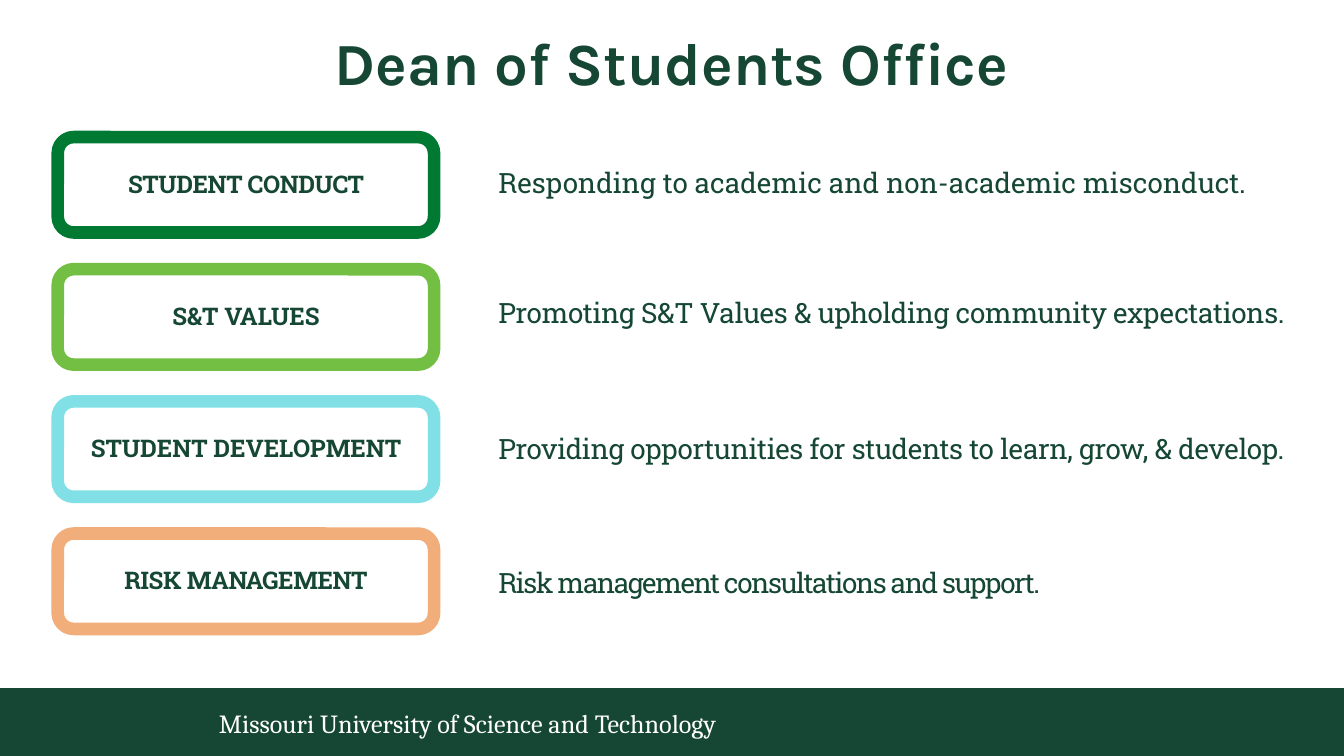
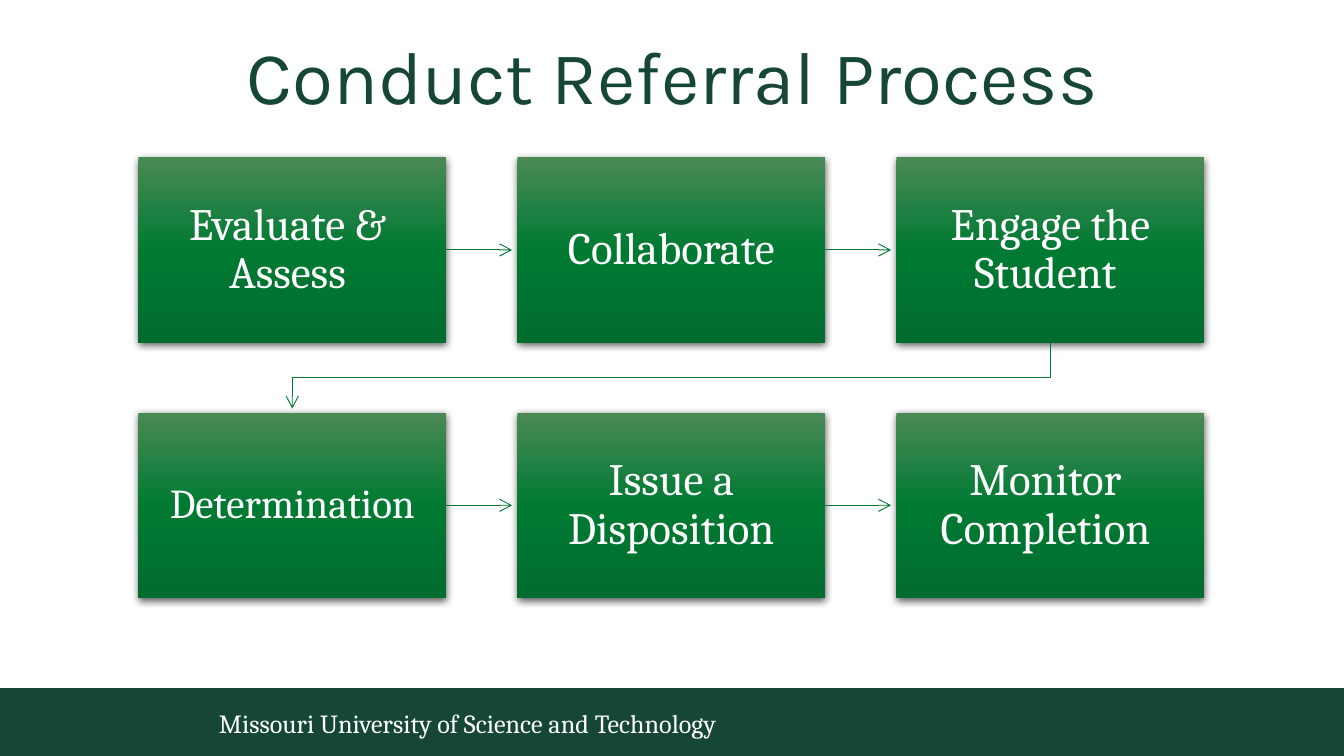
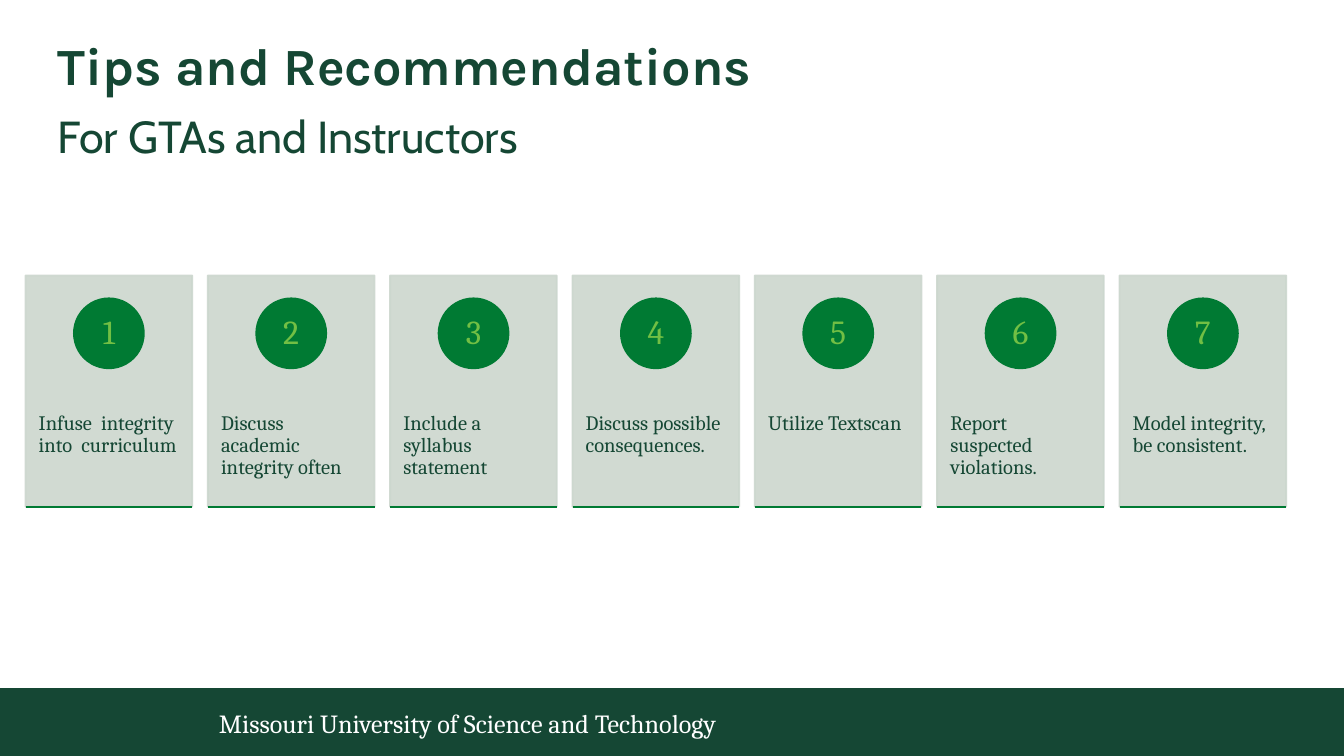
"""Build three slides about the Dean of Students Office."""
from dataclasses import dataclass

from pptx import Presentation
from pptx.dml.color import RGBColor
from pptx.enum.shapes import MSO_CONNECTOR, MSO_SHAPE
from pptx.enum.text import MSO_ANCHOR, MSO_AUTO_SIZE, PP_ALIGN
from pptx.oxml import parse_xml
from pptx.oxml.ns import nsdecls, qn
from pptx.util import Inches, Pt


@dataclass(frozen=True)
class Theme:
    """Hold the colours, fonts and type sizes."""

    dark: str = "154734"
    green: str = "007A33"
    lime: str = "72BF44"
    aqua: str = "81E0E5"
    peach: str = "F1AD7A"
    card: str = "CCD7CE"
    white: str = "FFFFFF"
    gradient: tuple = ((0, "4B8957"), (50, "007A33"), (100, "006C2D"))
    title_font: str = "Karla"
    subtitle_font: str = "Cabin"
    label_font: str = "Roboto Slab"
    body_font: str = "Cambria"
    title_size: int = 32
    large_title_size: int = 40
    small_title_size: int = 28
    subtitle_size: int = 24
    step_size: int = 24
    long_step_size: int = 22
    number_size: int = 18
    description_size: int = 15
    footer_size: int = 14
    label_size: int = 13
    tip_size: int = 11


THEME = Theme()


def write(text_frame, text, *, size, font=THEME.body_font, color=THEME.dark, bold=False,
          align=PP_ALIGN.LEFT, anchor=MSO_ANCHOR.TOP, margins=(0.1, 0.05, 0.1, 0.05),
          line_spacing=1.0, tracking=0):
    """Write one paragraph, with newlines as line breaks, into a text frame."""
    text_frame.word_wrap = True
    text_frame.auto_size = MSO_AUTO_SIZE.NONE
    text_frame.vertical_anchor = anchor
    (text_frame.margin_left, text_frame.margin_top,
     text_frame.margin_right, text_frame.margin_bottom) = map(Inches, margins)
    paragraph = text_frame.paragraphs[0]
    paragraph.alignment = align
    paragraph.line_spacing = line_spacing
    for index, line in enumerate(text.split("\n")):
        if index:
            paragraph.add_line_break()
        run = paragraph.add_run()
        run.text = line
        run.font.size = Pt(size)
        run.font.name = font
        run.font.bold = bold
        run.font.color.rgb = RGBColor.from_string(color)
        if tracking:
            run._r.get_or_add_rPr().set("spc", str(round(tracking * 100)))


class SlideBuilder:
    """Draw styled elements on the current slide."""

    def __init__(self, presentation, theme):
        """Keep the presentation and its theme."""
        self.presentation = presentation
        self.theme = theme
        self.slide = None

    def new_slide(self, title, top, size, bold=True, align=PP_ALIGN.CENTER):
        """Start a slide with its title, band and footer."""
        self.slide = self.presentation.slides.add_slide(self.presentation.slide_layouts[5])
        placeholder = self.slide.shapes.title
        placeholder.left, placeholder.top = Inches(0.43), Inches(top)
        placeholder.width, placeholder.height = Inches(9.14), Inches(0.44)
        write(placeholder.text_frame, title, size=size, font=self.theme.title_font, bold=bold,
              align=align, margins=(0, 0, 0, 0), line_spacing=0.9)
        self.box(-0.04, 5.12, 10.04, 0.51, fill=self.theme.dark)
        self.text("Missouri University of Science and Technology", 1.53, 5.18, 6.35, 0.4,
                  size=self.theme.footer_size, color=self.theme.white, anchor=MSO_ANCHOR.MIDDLE)

    def text(self, text, left, top, width, height, **text_format):
        """Add a text box."""
        shape = self.slide.shapes.add_textbox(*map(Inches, (left, top, width, height)))
        write(shape.text_frame, text, **text_format)

    def box(self, left, top, width, height, kind=MSO_SHAPE.RECTANGLE, fill=None, line=None,
            line_width=1):
        """Add a preset shape without a shadow."""
        shape = self.slide.shapes.add_shape(kind, *map(Inches, (left, top, width, height)))
        shape.shadow.inherit = False
        if fill:
            shape.fill.solid()
            shape.fill.fore_color.rgb = RGBColor.from_string(fill)
        else:
            shape.fill.background()
        if line:
            self.stroke(shape, line, line_width)
        else:
            shape.line.fill.background()
        return shape

    def gradient_box(self, left, top, width, height):
        """Add a rectangle with the theme gradient and a soft shadow."""
        shape = self.box(left, top, width, height)
        properties = shape.element.spPr
        stops = "".join(f'<a:gs pos="{position * 1000}"><a:srgbClr val="{color}"/></a:gs>'
                        for position, color in self.theme.gradient)
        properties.replace(properties.find(qn("a:noFill")), parse_xml(
            f'<a:gradFill {nsdecls("a")}><a:gsLst>{stops}</a:gsLst>'
            '<a:lin ang="5400000" scaled="0"/></a:gradFill>'))
        properties.find(qn("a:effectLst")).append(parse_xml(
            f'<a:outerShdw {nsdecls("a")} blurRad="{Pt(4.5)}" dist="{Pt(1.5)}" dir="5400000" '
            'algn="ctr" rotWithShape="0"><a:srgbClr val="000000"><a:alpha val="63000"/>'
            '</a:srgbClr></a:outerShdw>'))
        return shape

    def translucent_box(self, left, top, width, height, color, opacity):
        """Add a rectangle whose fill and outline are partly transparent."""
        shape = self.box(left, top, width, height, fill=color, line=color)
        for element in shape.element.spPr.iter(qn("a:srgbClr")):
            element.append(parse_xml(f'<a:alpha {nsdecls("a")} val="{opacity * 1000}"/>'))
        return shape

    def stroke(self, shape, color, width, arrow=False):
        """Set a line's colour and width, with an optional arrowhead."""
        shape.line.color.rgb = RGBColor.from_string(color)
        shape.line.width = Pt(width)
        if arrow:
            shape.element.spPr.find(qn("a:ln")).append(
                parse_xml(f'<a:tailEnd {nsdecls("a")} type="arrow"/>'))

    def line(self, start, end, width=1, arrow=False):
        """Add a straight green line."""
        connector = self.slide.shapes.add_connector(
            MSO_CONNECTOR.STRAIGHT, *map(Inches, (*start, *end)))
        self.stroke(connector, self.theme.green, width, arrow)
        connector.element.spPr.append(parse_xml(f'<a:effectLst {nsdecls("a")}/>'))

    def bent_arrow(self, points, width):
        """Add an arrow that runs through the given points."""
        start, *corners = [tuple(map(Inches, point)) for point in points]
        builder = self.slide.shapes.build_freeform(*start)
        builder.add_line_segments(corners, close=False)
        shape = builder.convert_to_shape()
        shape.shadow.inherit = False
        shape.fill.background()
        self.stroke(shape, self.theme.green, width, arrow=True)


def build_office(builder):
    """Build the slide on the duties of the office."""
    theme = builder.theme
    builder.new_slide("Dean of Students Office", 0.25, theme.title_size)
    duties = (
        ("STUDENT CONDUCT", theme.green, -0.2, 1.18,
         "Responding to academic and non-academic misconduct.", 0),
        ("S&T VALUES", theme.lime, 0, 2.15,
         "Promoting S&T Values & upholding community expectations.", -0.2),
        ("STUDENT DEVELOPMENT", theme.aqua, 0, 3.16,
         "Providing opportunities for students to learn, grow, & develop.", -0.2),
        ("RISK MANAGEMENT", theme.peach, -0.2, 4.16,
         "Risk management consultations and support.", -0.8),
    )
    first_top, last_top = 1.02, 3.97
    row_step = (last_top - first_top) / (len(duties) - 1)
    for row, (label, color, label_tracking, top, description, tracking) in enumerate(duties):
        box_top = first_top + row_step * row
        builder.box(0.43, box_top, 2.8, 0.71, MSO_SHAPE.ROUNDED_RECTANGLE,
                    line=color, line_width=6.75)
        builder.text(label, 0.43, box_top + 0.19, 2.8, 0.32, size=theme.label_size,
                     font=theme.label_font, bold=True, align=PP_ALIGN.CENTER,
                     tracking=label_tracking)
        builder.text(description, 3.61, top, 6.35, 0.35, size=theme.description_size,
                     font=theme.label_font, tracking=tracking)


def build_process(builder):
    """Build the slide with the six steps of a referral."""
    theme = builder.theme
    builder.new_slide("Conduct Referral Process", 0.3, theme.large_title_size, bold=False)
    steps = (
        ("Evaluate & \nAssess ", "Collaborate", "Engage the Student "),
        ("Determination", "Issue a Disposition", "Monitor  Completion "),
    )
    left, top, width, height = 1.03, 1.17, 2.29, 1.38
    column_step, row_step, arrow_width = 2.82, 1.9, 0.5
    for row, names in enumerate(steps):
        for column, name in enumerate(names):
            x, y = left + column_step * column, top + row_step * row
            step = builder.gradient_box(x, y, width, height)
            size = theme.long_step_size if name == "Determination" else theme.step_size
            write(step.text_frame, name, size=size, color=theme.white, align=PP_ALIGN.CENTER,
                  anchor=MSO_ANCHOR.MIDDLE, margins=(0.11, 0.12, 0.11, 0.12), line_spacing=0.9)
            if column < len(names) - 1:
                middle = y + height / 2
                builder.line((x + width, middle), (x + width + 0.49, middle), arrow_width, True)
    first_center = left + width / 2
    last_center = first_center + 2 * column_step
    bottom, next_top = top + height, top + row_step
    turn = (bottom + next_top) / 2
    builder.bent_arrow(((last_center, bottom), (last_center, turn), (first_center, turn),
                        (first_center, next_top - 0.03)), arrow_width)


def build_tips(builder):
    """Build the slide with seven numbered tips."""
    theme = builder.theme
    builder.new_slide("Tips and Recommendations", 0.3, theme.small_title_size,
                      align=PP_ALIGN.LEFT)
    builder.text("For GTAs and Instructors", 0.43, 0.81, 9.14, 0.34, size=theme.subtitle_size,
                 font=theme.subtitle_font, margins=(0, 0, 0, 0))
    tips = (
        "Infuse  integrity into  curriculum",
        "Discuss academic integrity often",
        "Include a syllabus statement",
        "Discuss possible consequences.",
        "Utilize Textscan",
        "Report suspected violations.",
        "Model integrity, be consistent.",
    )
    first_left, last_left, top, width, height, diameter = 0.19, 8.33, 2.05, 1.24, 1.72, 0.52
    step = (last_left - first_left) / (len(tips) - 1)
    for index, tip in enumerate(tips):
        left = first_left + step * index
        card = builder.translucent_box(left, top, width, height, theme.card, 90)
        write(card.text_frame, tip, size=theme.tip_size, margins=(0.1, 1.02, 0.1, 0.05),
              line_spacing=0.9)
        circle = builder.box(left + (width - diameter) / 2, top + 0.17, diameter, diameter,
                             MSO_SHAPE.OVAL, fill=theme.green, line=theme.green)
        write(circle.text_frame, str(index + 1), size=theme.number_size, color=theme.lime,
              align=PP_ALIGN.CENTER, anchor=MSO_ANCHOR.MIDDLE,
              margins=(0.04, 0.01, 0.04, 0.01), line_spacing=0.9)
        builder.line((left, top + height), (left + width, top + height))


def main():
    """Build and save the presentation."""
    presentation = Presentation()
    presentation.slide_width = Inches(10)
    presentation.slide_height = presentation.slide_width * 9 // 16
    builder = SlideBuilder(presentation, THEME)
    build_office(builder)
    build_process(builder)
    build_tips(builder)
    presentation.save("out.pptx")


if __name__ == "__main__":
    main()
